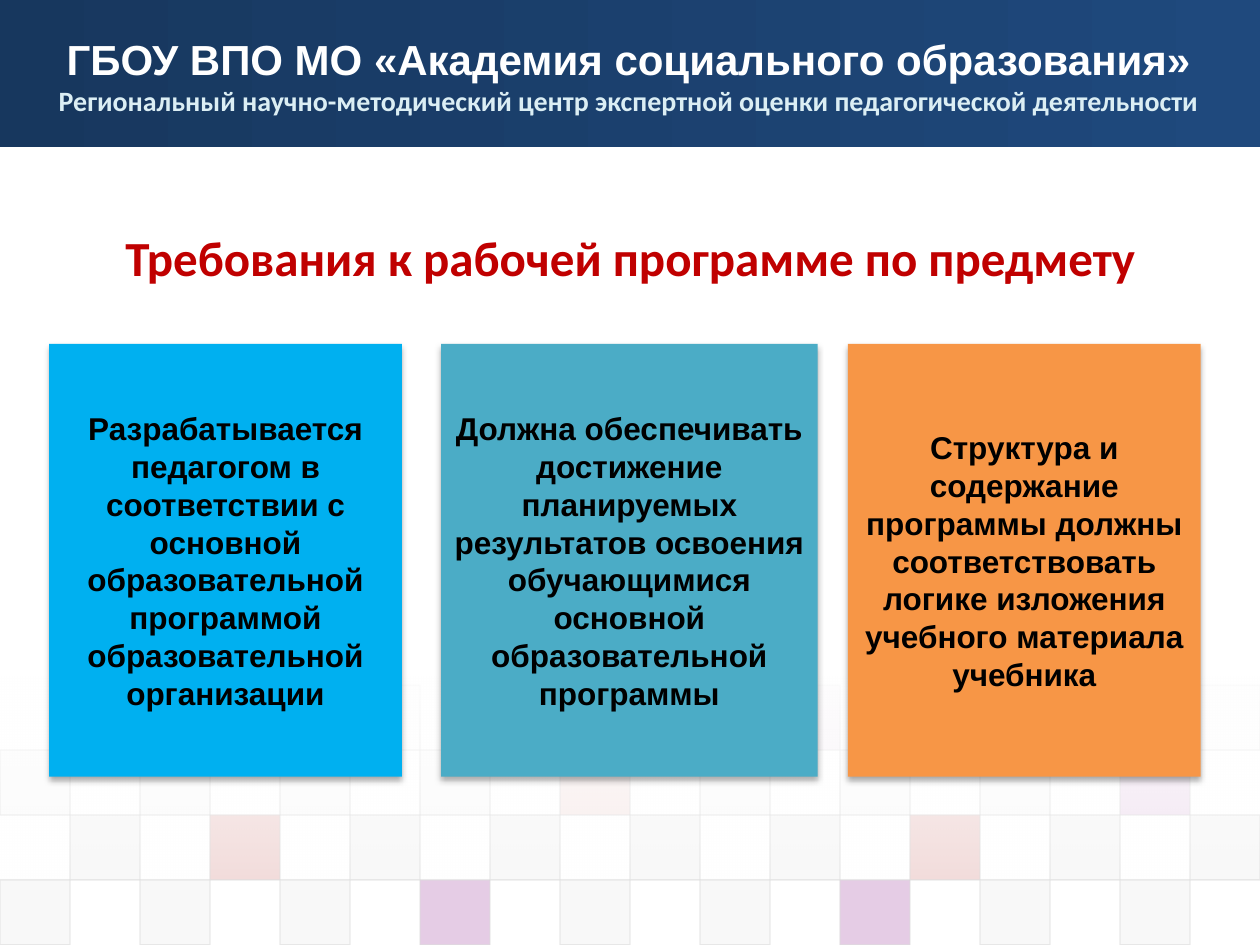
from lxml.etree import SubElement
from pptx import Presentation
from pptx.dml.color import RGBColor as Rgb
from pptx.enum.shapes import MSO_SHAPE as Shape
from pptx.enum.text import MSO_ANCHOR as Anchor, PP_ALIGN as Align
from pptx.oxml.ns import qn
from pptx.util import Inches, Pt

WIDTH, HEIGHT = Inches(10), Inches(7.5)

COLORS = {
    "navy": "17375E", "blue": "1F497D", "white": "FFFFFF", "black": "000000",
    "pale": "DBEEF4", "title": "C00000", "sky": "00B0F0", "teal": "4BACC6",
    "orange": "F79646", "grid": "DDDDDD", "light": "EAEAEA", "red": "C0504D",
    "purple": "800080",
}

# Mosaic: one character per column, with the opacity of each row in percent
TILES = {"g": "grid", "l": "light", "r": "red", "p": "purple"}
COLUMNS = 18
MOSAIC_TOP, MOSAIC_ROW = 72.5, 6.87
MOSAIC = [
    (".....l.....p.....l", 5),
    ("g.g.g.g.r.g.g.g.p.", 10),
    (".g.r.g.g.g.g.r.g.g", 20),
    ("g.g.g.p.g.g.p.g.g.", 20),
]

# Cards: left and width in percent of the slide, colour, text
CARDS = [
    (3.9, 28, "sky", "Разрабатывается педагогом в соответствии с основной "
     "образовательной программой образовательной организации"),
    (35, 29.9, "teal", "Должна обеспечивать достижение планируемых результатов "
     "освоения обучающимися основной образовательной программы"),
    (67.3, 28, "orange", "Структура и содержание программы должны соответствовать "
     "логике изложения учебного материала учебника"),
]


def place(left, top, width, height):
    """Turn percent of the slide into lengths."""
    return (int(WIDTH * left / 100), int(HEIGHT * top / 100),
            int(WIDTH * width / 100), int(HEIGHT * height / 100))


def set_alpha(color, percent):
    SubElement(color, qn("a:alpha"), val=str(percent * 1000))


def add_block(slide, area, color):
    """Plain rectangle without outline or shadow."""
    block = slide.shapes.add_shape(Shape.RECTANGLE, *place(*area))
    block.shadow.inherit = False
    block.fill.solid()
    block.fill.fore_color.rgb = Rgb.from_string(COLORS[color])
    block.line.fill.background()
    return block


def add_gradient(slide, area, stops, angle):
    """Rectangle with a gradient; stops are (colour, opacity) pairs."""
    block = add_block(slide, area, stops[0][0])
    block.fill.gradient()
    block.fill.gradient_angle = angle
    for stop, position, (color, alpha) in zip(block.fill.gradient_stops, (0, 1), stops):
        stop.position = position
        stop.color.rgb = Rgb.from_string(COLORS[color])
    for value, (color, alpha) in zip(block.element.spPr.iter(qn("a:srgbClr")), stops):
        set_alpha(value, alpha)


def add_mosaic(slide):
    column = 100 / COLUMNS
    for row, (pattern, alpha) in enumerate(MOSAIC):
        for index, mark in enumerate(pattern):
            if mark not in TILES:
                continue
            area = (index * column, MOSAIC_TOP + row * MOSAIC_ROW, column, MOSAIC_ROW)
            tile = add_block(slide, area, TILES[mark])
            tile.line.color.rgb = Rgb.from_string(COLORS["grid"])
            tile.line.width = Pt(0.75)
            fill, line = tile.element.spPr.iter(qn("a:srgbClr"))
            set_alpha(fill, alpha)
            set_alpha(line, 60)


def write(para, text, font, size, color):
    para.text = text
    para.alignment = Align.CENTER
    for span in para.runs:
        span.font.name = font
        span.font.size = Pt(size)
        span.font.bold = True
        span.font.color.rgb = Rgb.from_string(COLORS[color])


def add_text(slide, area, lines):
    frame = slide.shapes.add_textbox(*place(*area)).text_frame
    frame.word_wrap = True
    for index, line in enumerate(lines):
        para = frame.add_paragraph() if index else frame.paragraphs[0]
        write(para, *line)


def add_card(slide, left, width, color, text):
    card = add_block(slide, (left, 36.4, width, 45.8), color)
    effects = card.element.spPr.find(qn("a:effectLst"))
    shadow = SubElement(effects, qn("a:outerShdw"), blurRad=str(Pt(3.5)),
                        dist=str(Pt(2.2)), dir="5400000", rotWithShape="0")
    set_alpha(SubElement(shadow, qn("a:srgbClr"), val=COLORS["black"]), 32)
    frame = card.text_frame
    frame.word_wrap = True
    frame.vertical_anchor = Anchor.MIDDLE
    write(frame.paragraphs[0], text, "Arial", 18, "black")


def main():
    deck = Presentation()
    deck.slide_width, deck.slide_height = WIDTH, HEIGHT
    page = deck.slides.add_slide(deck.slide_layouts[6])

    # Background: header band, mosaic and the white veil over it
    add_gradient(page, (0, 0, 100, 15.6), [("navy", 100), ("blue", 100)], 0)
    add_mosaic(page)
    add_gradient(page, (0, 71.6, 100, 21.6), [("white", 90), ("white", 0)], 270)

    # Header and title
    add_text(page, (0, 2.9, 99.8, 11.6), [
        ("ГБОУ ВПО МО «Академия социального образования»", "Arial", 24, "white"),
        ("Региональный научно-методический центр экспертной оценки "
         "педагогической деятельности", "Calibri", 16, "pale"),
    ])
    add_text(page, (5, 23.4, 90, 8), [
        ("Требования к рабочей программе по предмету", "Calibri", 28, "title"),
    ])

    # Requirement cards
    for card in CARDS:
        add_card(page, *card)

    deck.save("out.pptx")


if __name__ == "__main__":
    main()
